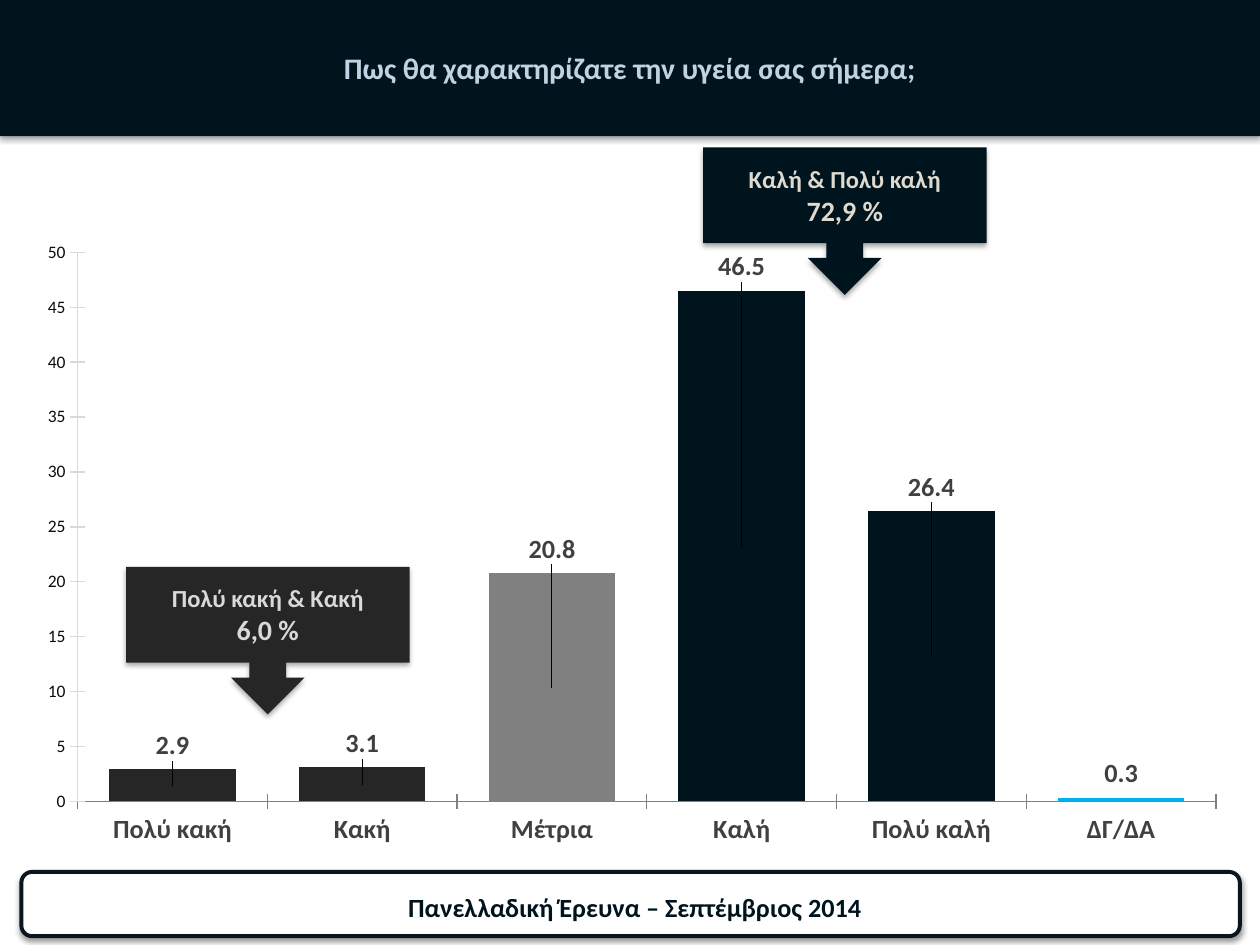
from dataclasses import dataclass

from lxml.etree import SubElement
from pptx import Presentation
from pptx.chart.data import CategoryChartData
from pptx.dml.color import RGBColor
from pptx.enum.chart import XL_CHART_TYPE, XL_TICK_MARK
from pptx.enum.shapes import MSO_SHAPE
from pptx.enum.text import MSO_ANCHOR, PP_ALIGN
from pptx.oxml import parse_xml
from pptx.oxml.ns import nsdecls, qn
from pptx.util import Inches, Pt


@dataclass(frozen=True)
class Theme:
    font: str = "Calibri"
    navy: str = "00141E"
    frame: str = "0A1520"
    charcoal: str = "262626"
    gray: str = "808080"
    sky: str = "00B0F0"
    white: str = "FFFFFF"
    title: str = "BFD3E3"
    pale: str = "D9D9D9"
    cream: str = "DEDAD0"
    label: str = "404040"
    scale: str = "0D0D0D"
    title_size: float = 17
    label_size: float = 15
    group_size: float = 14
    share_size: float = 16
    scale_size: float = 10


THEME = Theme()
WIDTH, HEIGHT = 10, 7.5
BANNER = (0, 0, WIDTH, 1.08)
CALLOUT_SIZE = (2.25, 1.17)
PLOT = {"x": 0.047, "y": 0.049, "w": 0.951, "h": 0.843}
SCALE_MAX = 50
LABEL_GAP = 0.037
ANSWERS = [
    ("Πολύ κακή", 2.9, THEME.charcoal),
    ("Κακή", 3.1, THEME.charcoal),
    ("Μέτρια", 20.8, THEME.gray),
    ("Καλή", 46.5, THEME.navy),
    ("Πολύ καλή", 26.4, THEME.navy),
    ("ΔΓ/ΔΑ", 0.3, THEME.sky),
]


def color(value):
    return RGBColor.from_string(value)


def lengths(area):
    return [Inches(value) for value in area]


def style_font(font, size, value, bold=True):
    font.name = THEME.font
    font.size = Pt(size)
    font.bold = bold
    font.color.rgb = color(value)


def write_lines(shape, lines):
    frame = shape.text_frame
    frame.word_wrap = True
    frame.vertical_anchor = MSO_ANCHOR.MIDDLE
    for index, (words, size, value) in enumerate(lines):
        para = frame.add_paragraph() if index else frame.paragraphs[0]
        para.alignment = PP_ALIGN.CENTER
        span = para.add_run()
        span.text = words
        style_font(span.font, size, value)


def add_text(page, area, *line):
    box = page.shapes.add_textbox(*lengths(area))
    write_lines(box, [line])


def add_panel(page, preset, area, fill, line=None, opacity=35, distance=1.8):
    panel = page.shapes.add_shape(preset, *lengths(area))
    panel.fill.solid()
    panel.fill.fore_color.rgb = color(fill)
    if line:
        panel.line.color.rgb = color(line)
        panel.line.width = Pt(2.25)
    else:
        panel.line.fill.background()
    panel.shadow.inherit = False
    effects = panel._element.spPr.find(qn("a:effectLst"))
    effects.append(parse_xml(
        f'<a:outerShdw {nsdecls("a")} blurRad="{Pt(3.1)}" dist="{Pt(distance)}" '
        f'dir="5400000" rotWithShape="0"><a:srgbClr val="000000">'
        f'<a:alpha val="{opacity * 1000}"/></a:srgbClr></a:outerShdw>'))
    return panel


def add_callout(page, left, top, fill, text_color, group, share):
    callout = add_panel(page, MSO_SHAPE.DOWN_ARROW_CALLOUT,
                        (left, top, *CALLOUT_SIZE), fill)
    write_lines(callout, [(group, THEME.group_size, text_color),
                          (share, THEME.share_size, text_color)])


def manual_layout(**settings):
    layout = parse_xml(f'<c:layout {nsdecls("c")}><c:manualLayout/></c:layout>')
    for name, value in settings.items():
        SubElement(layout[0], qn(f"c:{name}"), val=str(value))
    return layout


def place_plot(chart):
    plot_area = chart._chartSpace.chart.plotArea
    for layout in plot_area.findall(qn("c:layout")):
        plot_area.remove(layout)
    plot_area.insert(0, manual_layout(layoutTarget="inner", xMode="edge",
                                      yMode="edge", **PLOT))


def point_label(index, value):
    shift = value / 2 / SCALE_MAX * PLOT["h"] + LABEL_GAP
    label = parse_xml(f'<c:dLbl {nsdecls("c")}><c:idx val="{index}"/></c:dLbl>')
    label.append(manual_layout(x=0, y=round(-shift, 3)))
    for name in ("LegendKey", "Val", "CatName", "SerName", "Percent", "BubbleSize"):
        SubElement(label, qn(f"c:show{name}"), val=str(int(name == "Val")))
    return label


def style_bars(plot):
    plot.gap_width = 50
    plot.overlap = 100
    plot.vary_by_categories = False
    series = plot.series[0]
    series.format.fill.solid()
    series.format.fill.fore_color.rgb = color(THEME.sky)
    labels = series.data_labels
    labels.show_value = True
    labels.number_format = "0.0"
    labels.number_format_is_linked = False
    style_font(labels.font, THEME.label_size, THEME.label)
    for index, (_, value, fill) in enumerate(ANSWERS):
        point = series.points[index].format.fill
        point.solid()
        point.fore_color.rgb = color(fill)
        labels._element.insert(index, point_label(index, value))


def style_axis(axis, line, size, text_color, bold):
    axis.has_major_gridlines = False
    axis.major_tick_mark = XL_TICK_MARK.CROSS
    axis.minor_tick_mark = XL_TICK_MARK.NONE
    axis.format.line.color.rgb = color(line)
    axis.format.line.width = Pt(0.75)
    style_font(axis.tick_labels.font, size, text_color, bold)


def add_health_chart(page, area):
    data = CategoryChartData(number_format="0.0")
    data.categories = [name for name, _, _ in ANSWERS]
    data.add_series("Series 1", [value for _, value, _ in ANSWERS])
    chart = page.shapes.add_chart(XL_CHART_TYPE.COLUMN_STACKED, *lengths(area), data).chart
    chart.has_legend = False
    chart.has_title = False
    chart.font.name = THEME.font
    chart.font.size = Pt(18)
    style_axis(chart.category_axis, THEME.gray, THEME.label_size, THEME.label, True)
    scale = chart.value_axis
    style_axis(scale, THEME.pale, THEME.scale_size, THEME.scale, False)
    scale.minimum_scale = 0
    scale.maximum_scale = SCALE_MAX
    scale.major_unit = 5
    scale.tick_labels.number_format = "0"
    scale.tick_labels.number_format_is_linked = False
    style_bars(chart.plots[0])
    place_plot(chart)


def main():
    deck = Presentation()
    deck.slide_width, deck.slide_height = lengths((WIDTH, HEIGHT))
    page = deck.slides.add_slide(deck.slide_layouts[6])
    add_panel(page, MSO_SHAPE.RECTANGLE, BANNER, THEME.navy)
    add_panel(page, MSO_SHAPE.ROUNDED_RECTANGLE, (0.17, 6.92, 9.67, 0.51),
              THEME.white, THEME.frame, 38, 1.6)
    add_text(page, (2, 7.02, 6.08, 0.35), "Πανελλαδική Έρευνα – Σεπτέμβριος 2014",
             THEME.label_size, THEME.navy)
    add_text(page, BANNER, "Πως θα χαρακτηρίζατε την υγεία σας σήμερα;",
             THEME.title_size, THEME.title)
    add_health_chart(page, (0.17, 1.75, 9.5, 5.17))
    add_callout(page, 1, 4.5, THEME.charcoal, THEME.pale, "Πολύ κακή & Κακή", "6,0 %")
    add_callout(page, 5.58, 1.17, THEME.navy, THEME.cream, "Καλή & Πολύ καλή", "72,9 %")
    deck.save("out.pptx")


if __name__ == "__main__":
    main()
